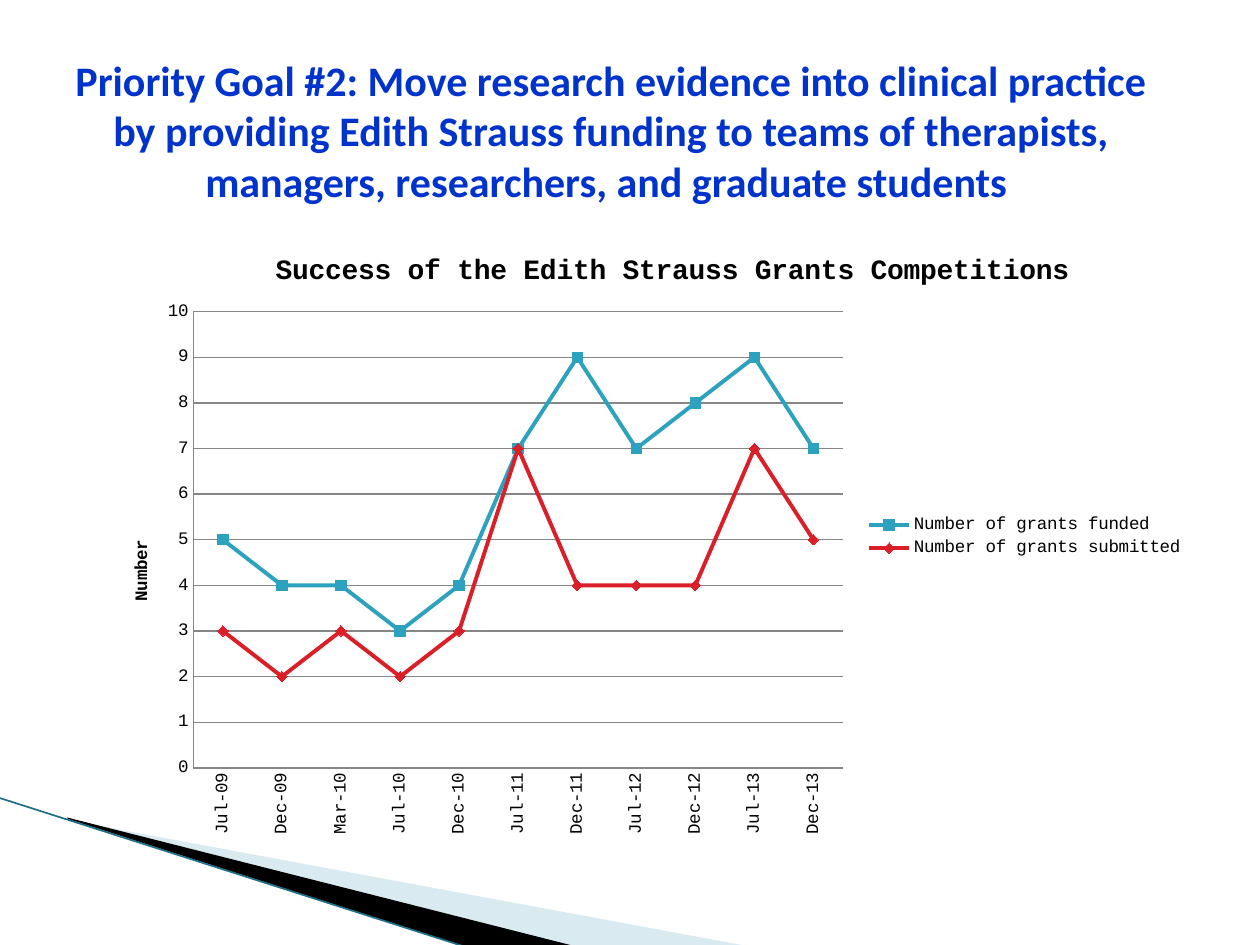
from dataclasses import dataclass

from lxml import etree
from pptx import Presentation
from pptx import util as u
from pptx.chart.data import CategoryChartData
from pptx.dml.color import RGBColor
from pptx.enum import chart as ch, shapes, text
from pptx.oxml.ns import qn

BLACK = RGBColor(0x00, 0x00, 0x00)
BLUE = RGBColor(0x00, 0x33, 0xCC)
TEAL = RGBColor(0x2D, 0xA2, 0xBF)
RED = RGBColor(0xDA, 0x1F, 0x28)
GREY = RGBColor(0x86, 0x86, 0x86)
PALE = RGBColor(0xA0, 0xCB, 0xDC)
EDGE = RGBColor(0x1B, 0x6F, 0x86)
MONO = "Courier New"


@dataclass
class Wedge:
    points: list[tuple[float, float]]
    color: RGBColor
    opacity: int


@dataclass
class Series:
    name: str
    values: list[int]
    color: RGBColor
    marker: ch.XL_MARKER_STYLE


WEDGES = [
    Wedge([(1.4, 16.54), (15.11, 19.08), (11.58, 19.08), (1.4, 16.51)], PALE, 40),
    Wedge([(1.35, 16.48), (11.61, 19.08), (9.45, 19.1), (1.37, 16.51)], BLACK, 100),
]
MONTHS = ["Jul-09", "Dec-09", "Mar-10", "Jul-10", "Dec-10", "Jul-11",
          "Dec-11", "Jul-12", "Dec-12", "Jul-13", "Dec-13"]
SERIES = [
    Series("Number of grants funded", [5, 4, 4, 3, 4, 7, 9, 7, 8, 9, 7],
           TEAL, ch.XL_MARKER_STYLE.SQUARE),
    Series("Number of grants submitted", [3, 2, 3, 2, 3, 7, 4, 4, 4, 7, 5],
           RED, ch.XL_MARKER_STYLE.DIAMOND),
]
TITLE = ("Priority Goal #2: Move research evidence into clinical practice "
         "by providing Edith Strauss funding to teams of therapists, "
         "managers, researchers, and graduate students ")


def draw_wedge(s, wedge: Wedge) -> None:
    pts = [(u.Cm(x), u.Cm(y)) for x, y in wedge.points]
    fb = s.shapes.build_freeform(*pts[0])
    fb.add_line_segments(pts[1:], close=True)
    sp = fb.convert_to_shape()
    sp.shadow.inherit = False
    sp.fill.solid()
    sp.fill.fore_color.rgb = wedge.color
    sp.line.fill.background()
    if wedge.opacity < 100:
        color = sp.fill._xPr.find(".//" + qn("a:srgbClr"))
        etree.SubElement(color, qn("a:alpha"), val=str(wedge.opacity * 1000))


def draw_edge(s) -> None:
    line = s.shapes.add_connector(shapes.MSO_CONNECTOR.STRAIGHT,
                                  u.Cm(-0.03), u.Cm(16.08), u.Cm(9.42), u.Cm(19.1))
    line.line.color.rgb = EDGE
    line.line.width = u.Pt(0.95)
    etree.SubElement(line._element.spPr, qn("a:effectLst"))


def draw_title(s) -> None:
    sp = s.shapes.add_textbox(u.Cm(0.89), u.Cm(1.12), u.Cm(22.86), u.Cm(3))
    tf = sp.text_frame
    tf.word_wrap = True
    tf.vertical_anchor = text.MSO_ANCHOR.MIDDLE
    tf.text = TITLE
    p = tf.paragraphs[0]
    p.alignment = text.PP_ALIGN.CENTER
    style_font(p.runs[0].font, 24, BLUE, "Calibri", True)


def style_font(font, size: float, color=BLACK, name=MONO, bold=False) -> None:
    font.size = u.Pt(size)
    font.color.rgb = color
    font.name = name
    font.bold = bold


def place(element, index: int, inner=False, **fractions: float) -> None:
    for old in element.findall(qn("c:layout")):
        element.remove(old)
    layout = etree.Element(qn("c:layout"))
    manual = etree.SubElement(layout, qn("c:manualLayout"))
    if inner:
        etree.SubElement(manual, qn("c:layoutTarget"), val="inner")
    for axis in "xy":
        etree.SubElement(manual, qn(f"c:{axis}Mode"), val="edge")
    for key, value in fractions.items():
        etree.SubElement(manual, qn(f"c:{key}"), val=str(value))
    element.insert(index, layout)


def set_heading(title, wording: str, size: float, x: float, y: float) -> None:
    title.text_frame.text = wording
    style_font(title.text_frame.paragraphs[0].runs[0].font, size, bold=True)
    place(title._element, 1, x=x, y=y)


def style_axis(axis) -> None:
    axis.major_tick_mark = axis.minor_tick_mark = ch.XL_TICK_MARK.NONE
    axis.format.line.color.rgb = GREY
    style_font(axis.tick_labels.font, 10)


def style_series(line, series: Series) -> None:
    line.smooth = False
    line.format.line.color.rgb = series.color
    line.format.line.width = u.Pt(2.25)
    line.marker.style = series.marker
    line.marker.size = 6
    line.marker.format.fill.solid()
    line.marker.format.fill.fore_color.rgb = series.color
    line.marker.format.line.color.rgb = series.color


def draw_chart(s) -> None:
    data = CategoryChartData()
    data.categories = MONTHS
    for series in SERIES:
        data.add_series(series.name, series.values)
    chart = s.shapes.add_chart(ch.XL_CHART_TYPE.LINE_MARKERS, u.Cm(1.9), u.Cm(4.52),
                               u.Cm(22.2), u.Cm(12.6), data).chart
    style_font(chart.font, 10)
    chart.has_title = True
    set_heading(chart.chart_title, "Success of the Edith Strauss Grants Competitions",
                16, 0.16, 0.04)
    chart.plots[0].vary_by_categories = False
    for line, series in zip(chart.plots[0].series, SERIES):
        style_series(line, series)

    months, counts = chart.category_axis, chart.value_axis
    style_axis(months)
    style_axis(counts)
    months._element.txPr.find(qn("a:bodyPr")).set("rot", "-5400000")
    counts.minimum_scale, counts.maximum_scale, counts.major_unit = 0, 10, 1
    counts.has_major_gridlines = True
    counts.major_gridlines.format.line.color.rgb = GREY
    counts.has_title = True
    set_heading(counts.axis_title, "Number", 10, 0.03, 0.5)
    body = counts.axis_title.text_frame._txBody.find(qn("a:bodyPr"))
    body.set("rot", "-5400000")
    body.set("vert", "horz")

    chart.has_legend = True
    chart.legend.position = ch.XL_LEGEND_POSITION.RIGHT
    chart.legend.include_in_layout = False
    style_font(chart.legend.font, 10)
    place(chart.legend._element, 1, x=0.7, y=0.46, w=0.29, h=0.08)
    place(chart._chartSpace.find(".//" + qn("c:plotArea")), 0, True,
          x=0.09, y=0.14, w=0.59, h=0.73)


def main() -> None:
    prs = Presentation()
    prs.slide_width, prs.slide_height = u.Cm(25.4), u.Cm(19.05)
    s = prs.slides.add_slide(prs.slide_layouts[6])
    for wedge in WEDGES:
        draw_wedge(s, wedge)
    draw_edge(s)
    draw_title(s)
    draw_chart(s)
    prs.save("out.pptx")


if __name__ == "__main__":
    main()
